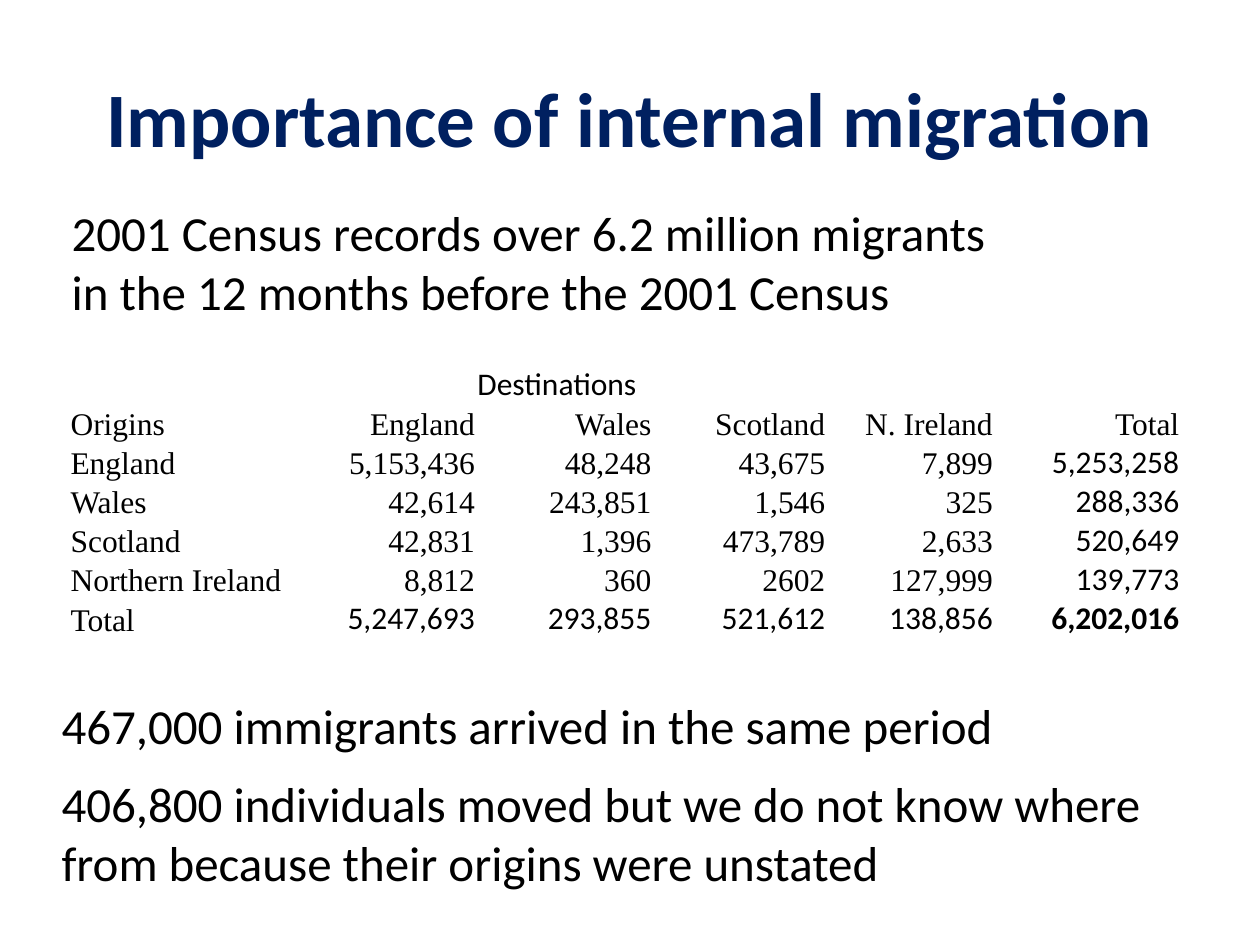
from pptx import Presentation
from pptx.dml.color import RGBColor
from pptx.enum.text import MSO_ANCHOR, PP_ALIGN
from pptx.util import Inches, Pt

NAVY = RGBColor(0x00, 0x20, 0x60)
BLACK = RGBColor(0x00, 0x00, 0x00)
LEFT, CENTER, RIGHT = PP_ALIGN.LEFT, PP_ALIGN.CENTER, PP_ALIGN.RIGHT
TOP, MIDDLE, BOTTOM = MSO_ANCHOR.TOP, MSO_ANCHOR.MIDDLE, MSO_ANCHOR.BOTTOM

COLUMN_WIDTHS = [1.94, 1.29, 1.4, 1.38, 1.33, 1.48]
ROW_HEIGHT = 0.31
MIGRATION_FLOWS = [
    ["", "", "Destinations", "", "", ""],
    ["Origins", "England", "Wales", "Scotland", "N. Ireland", "Total"],
    ["England", "5,153,436", "48,248", "43,675", "7,899", "5,253,258"],
    ["Wales", "42,614", "243,851", "1,546", "325", "288,336"],
    ["Scotland", "42,831", "1,396", "473,789", "2,633", "520,649"],
    ["Northern Ireland", "8,812", "360", "2602", "127,999", "139,773"],
    ["Total", "5,247,693", "293,855", "521,612", "138,856", "6,202,016"],
]


class SlideBuilder:
    body_font = "Calibri"
    table_font = "Times New Roman"
    table_size = 18

    def __init__(self, slide):
        self.slide = slide

    def run(self, paragraph, wording, size, font=body_font, color=BLACK, bold=False):
        run = paragraph.add_run()
        run.text = wording
        run.font.size = Pt(size)
        run.font.name = font
        run.font.color.rgb = color
        run.font.bold = bold

    def text(self, left, top, width, height, paragraphs, size=28, color=BLACK,
             bold=False, align=LEFT, anchor=TOP, gap=0):
        box = self.slide.shapes.add_textbox(
            Inches(left), Inches(top), Inches(width), Inches(height))
        frame = box.text_frame
        frame.word_wrap = True
        frame.vertical_anchor = anchor
        for index, wording in enumerate(paragraphs):
            paragraph = frame.add_paragraph() if index else frame.paragraphs[0]
            paragraph.alignment = align
            if index:
                paragraph.space_before = Pt(gap)
            self.run(paragraph, wording, size, color=color, bold=bold)

    def table(self, left, top, widths, row_height, rows):
        table = self.slide.shapes.add_table(
            len(rows), len(widths), Inches(left), Inches(top),
            Inches(sum(widths)), Inches(row_height * len(rows))).table
        table.first_row = False
        table.horz_banding = False
        for column, width in zip(table.columns, widths):
            column.width = Inches(width)
        last_row, last_column = len(rows) - 1, len(widths) - 1
        for r, row in enumerate(rows):
            for c, wording in enumerate(row):
                is_sum = (r > 1 and c == last_column) or (r == last_row and c > 0)
                self.cell(
                    table.cell(r, c), wording,
                    font=self.body_font if r == 0 or is_sum else self.table_font,
                    align=LEFT if r == 0 or c == 0 else RIGHT,
                    bold=r == last_row and c == last_column)

    def cell(self, cell, wording, font, align, bold):
        cell.fill.background()
        cell.vertical_anchor = BOTTOM
        cell.margin_left = cell.margin_right = cell.margin_top = Inches(0.01)
        cell.margin_bottom = 0
        paragraph = cell.text_frame.paragraphs[0]
        paragraph.alignment = align
        if wording:
            self.run(paragraph, wording, self.table_size, font, bold=bold)


def main():
    presentation = Presentation()
    presentation.slide_width = Inches(10)
    presentation.slide_height = Inches(7.5)
    builder = SlideBuilder(presentation.slides.add_slide(presentation.slide_layouts[6]))

    builder.text(0.5, 0.3, 9, 1.25, ["Importance of internal migration"],
                 size=44, color=NAVY, bold=True, align=CENTER, anchor=MIDDLE)
    builder.table(0.55, 2.89, COLUMN_WIDTHS, ROW_HEIGHT, MIGRATION_FLOWS)
    builder.text(0.47, 1.56, 7.81, 1.04, [
        "2001 Census records over 6.2 million migrants "
        "in the 12 months before the 2001 Census"])
    builder.text(0.39, 5.47, 9.14, 1.67, [
        "467,000 immigrants arrived in the same period",
        "406,800 individuals moved but we do not know where "
        "from because their origins were unstated"], gap=11)

    presentation.save("out.pptx")


if __name__ == "__main__":
    main()
